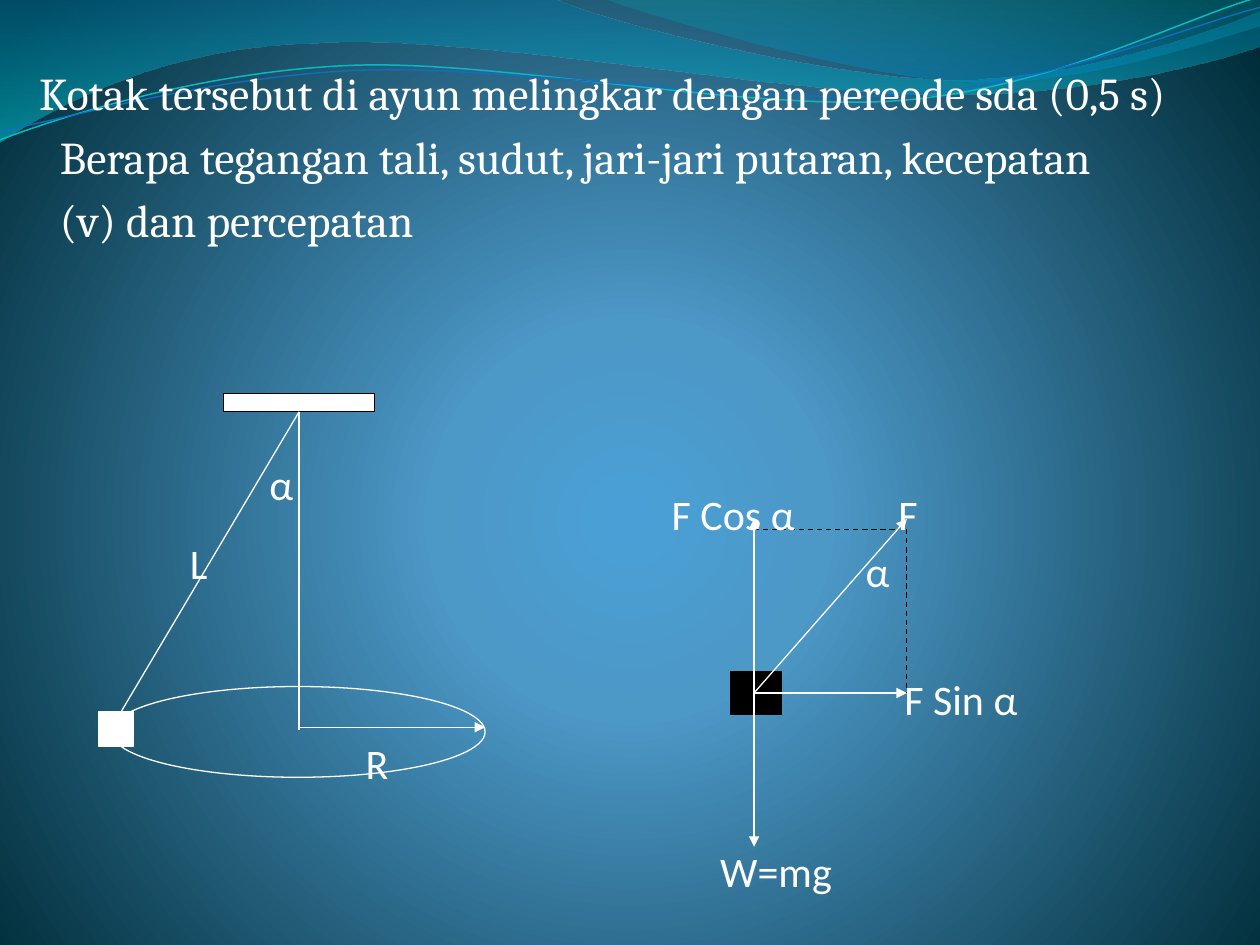
"""Build a physics slide about a box swung in a horizontal circle."""
import pptx
import pptx.dml.color
import pptx.enum.dml
import pptx.enum.shapes
import pptx.oxml
import pptx.oxml.ns
import pptx.util

Cm, Pt = pptx.util.Cm, pptx.util.Pt
RGBColor = pptx.dml.color.RGBColor
SHAPES = pptx.enum.shapes.MSO_SHAPE
DASH = pptx.enum.dml.MSO_LINE.DASH
NAMESPACE = pptx.oxml.ns.nsdecls("a")

WHITE, BLACK = RGBColor(255, 255, 255), RGBColor(0, 0, 0)
TEAL, BLUE = RGBColor(0x0A, 0xB8, 0xBF), RGBColor(0x0F, 0x6F, 0xC6)
SKY, STEEL, NIGHT = RGBColor(0x4A, 0xA0, 0xD6), RGBColor(0x4C, 0x98, 0xC7), RGBColor(0, 0x2C, 0x38)
OCEAN, CYAN = RGBColor(0, 0x74, 0xA1), RGBColor(0, 0xC6, 0xCF)
LAGOON, AZURE = RGBColor(0, 0xA1, 0xA9), RGBColor(0, 0x8B, 0xBF)

DOWNWARD = '<a:lin ang="5400000" scaled="1"/>'
RADIAL = '<a:path path="circle"><a:fillToRect l="10000" t="110000" r="10000" b="100000"/></a:path>'
BACKGROUND = [(0, SKY, 100), (25, STEEL, 100), (100, NIGHT, 100)]

BANDS = [
    ([(0, OCEAN, 45), (100, CYAN, 55)],
     [(0, 0), (11.18, -0.03), (12.09, 0.43, 16.87, 1.6, 19.25, 1.6),
      (21.67, 1.6, 24.33, 0.66, 25.4, 0.23), (25.43, 0.91),
      (24.97, 1.12, 22.1, 1.93, 18.95, 1.91), (15.8, 1.91, 9.7, 0.71, 6.53, 0.86),
      (3.28, 0.91, 1.17, 2.11, -0.03, 2.87)]),
    ([(0, LAGOON, 30), (80, AZURE, 45)],
     [(12.17, -0.03), (12.93, 0.28, 17.32, 1.57, 19.53, 1.65),
      (21.74, 1.75, 24.41, 0.81, 25.4, 0.53), (25.4, 0)]),
]
WAVES = [
    (TEAL, 0.85,
     [(0, 2.82), (1.22, 2.36, 4.01, 1.45, 7.04, 1.32), (10.03, 1.19, 15.06, 2.26, 18.11, 2.03),
      (21.16, 1.8, 23.83, 0.38, 25.35, -0.05)]),
    (BLUE, 0.75,
     [(0, 2.64), (1.19, 2.44, 4.17, 1.55, 7.19, 1.42), (10.24, 1.3, 15.16, 2.13, 18.21, 1.91),
      (21.23, 1.7, 23.9, 0.53, 25.4, 0.15)]),
]

QUESTION = [
    ("Kotak tersebut di ayun melingkar dengan pereode sda (0,5 s)", 0),
    ("Berapa tegangan tali, sudut, jari-jari putaran, kecepatan", 0.42),
    ("(v) dan percepatan", 0.42),
]
AXIS_X, AXIS_Y = 6.03, 8.3
BOX_X, BOX_Y, FORCE_X, FORCE_Y, DASH_Y = 15.2, 13.97, 18.28, 10.46, 10.67
PENDULUM = {
    "bodies": {
        "orbit": (SHAPES.OVAL, (2.24, 13.84, 7.54, 1.83), None, WHITE),
        "swung box": (SHAPES.RECTANGLE, (1.98, 14.35, 0.71, 0.69), WHITE, WHITE),
        "ceiling": (SHAPES.RECTANGLE, (4.51, 7.93, 3.04, 0.37), WHITE, BLACK),
    },
    "lines": [
        ((AXIS_X, AXIS_Y), (AXIS_X, 14.71), WHITE, "", "ceiling"),
        ((AXIS_X, AXIS_Y), (2.44, 14.35), WHITE, "", "ceiling"),
        ((AXIS_X, 14.66), (9.78, 14.66), WHITE, "tail", None),
    ],
    "labels": [("α", 5.18, 9.12, 1.32), ("L", 3.58, 10.72, 1.32), ("R", 7.12, 14.75, 1.32)],
}
FORCES = {
    "bodies": {"force box": (SHAPES.RECTANGLE, (14.73, 13.54, 1.03, 0.86), BLACK, BLACK)},
    "lines": [
        ((BOX_X, FORCE_Y), (BOX_X, 17.07), WHITE, "head tail", None),
        ((BOX_X, BOX_Y), (FORCE_X, FORCE_Y), WHITE, "tail", None),
        ((BOX_X, BOX_Y), (FORCE_X, BOX_Y), WHITE, "tail", None),
        ((FORCE_X, DASH_Y), (FORCE_X, BOX_Y), BLACK, "", None),
        ((BOX_X, DASH_Y), (18.11, DASH_Y), BLACK, "", None),
    ],
    "labels": [
        ("W=mg", 14.27, 16.92, 4.98), ("F Sin α", 17.98, 13.46, 3.66),
        ("F Cos α", 13.29, 9.73, 3.89), ("F", 17.86, 9.73, 2.13), ("α", 17.2, 10.87, 2.13),
    ],
}
QUESTION_FONT = {"name": "Cambria", "size": Pt(26)}
LABEL_FONT = {"name": "Calibri", "size": Pt(24)}
QUESTION_FRAME = {"word_wrap": True, "margin_left": 0, "margin_right": Cm(0.05)}
LABEL_FRAME = {"word_wrap": True}


def set_all(target, values):
    for name, value in values.items():
        setattr(target, name, value)


def set_gradient(fill, element, stops, direction):
    fill.gradient()
    gradient = next(element.iter(pptx.oxml.ns.qn("a:gradFill")))
    for child in list(gradient):
        gradient.remove(child)
    stop_xml = "".join(
        f'<a:gs pos="{position * 1000}"><a:srgbClr val="{color}">'
        f'<a:alpha val="{opacity * 1000}"/></a:srgbClr></a:gs>'
        for position, color, opacity in stops)
    for xml in (f"<a:gsLst {NAMESPACE}>{stop_xml}</a:gsLst>",
                direction.replace(" ", f" {NAMESPACE} ", 1)):
        gradient.append(pptx.oxml.parse_xml(xml))


def add_outline(shapes, segments, close):
    points = [(Cm(segment[i]), Cm(segment[i + 1]))
              for segment in segments for i in range(0, len(segment), 2)]
    builder = shapes.build_freeform(*points[0])
    builder.add_line_segments(points[1:], close=close)
    shape = builder.convert_to_shape()
    shape.shadow.inherit = False
    steps = iter(list(shape._element.iter(pptx.oxml.ns.qn("a:lnTo"))))
    for segment in segments[1:]:
        group = [next(steps) for _ in range(len(segment) // 2)]
        if len(group) == 3:
            curve = pptx.oxml.parse_xml(f"<a:cubicBezTo {NAMESPACE}/>")
            group[0].addprevious(curve)
            for step in group:
                curve.append(step[0])
                step.getparent().remove(step)
    return shape


def set_line(line, color, width=0.75):
    line.color.rgb = color
    line.width = Pt(width)


def add_body(shapes, kind, box, fill, outline):
    shape = shapes.add_shape(kind, *map(Cm, box))
    shape.shadow.inherit = False
    if fill is None:
        shape.fill.background()
    else:
        shape.fill.solid()
        shape.fill.fore_color.rgb = fill
    set_line(shape.line, outline)
    return shape


def add_line(shapes, start, end, color, arrows, anchor):
    connector = shapes.add_connector(
        pptx.enum.shapes.MSO_CONNECTOR.STRAIGHT, *map(Cm, start + end))
    set_line(connector.line, color)
    if color == BLACK:
        connector.line.dash_style = DASH
    if anchor is not None:
        connector.begin_connect(anchor, 2)
    for end_name in arrows.split():
        connector.line._get_or_add_ln().append(
            pptx.oxml.parse_xml(f'<a:{end_name}End {NAMESPACE} type="triangle"/>'))
    connector._element.spPr.append(pptx.oxml.parse_xml(f"<a:effectLst {NAMESPACE}/>"))


def add_text(shapes, box, lines, frame_format, font_format, space_before):
    frame = shapes.add_textbox(*map(Cm, box)).text_frame
    set_all(frame, frame_format)
    for index, (text, indent) in enumerate(lines):
        paragraph = frame.add_paragraph() if index else frame.paragraphs[0]
        paragraph.space_before = Pt(space_before)
        if indent:
            paragraph._p.get_or_add_pPr().set("marL", str(Cm(indent)))
        run = paragraph.add_run()
        run.text = text
        set_all(run.font, font_format)
        run.font.color.rgb = WHITE


def add_figure(slide, figure):
    shapes = slide.shapes.add_group_shape().shapes
    bodies = {name: add_body(shapes, *body) for name, body in figure["bodies"].items()}
    for *line, anchor in figure["lines"]:
        add_line(shapes, *line, bodies.get(anchor))
    for text, left, top, width in figure["labels"]:
        add_text(shapes, (left, top, width, 1.14), [(text, 0)], LABEL_FRAME, LABEL_FONT, 0)


def main():
    presentation = pptx.Presentation()
    set_all(presentation, {"slide_width": Cm(25.4), "slide_height": Cm(19.05)})
    slide = presentation.slides.add_slide(presentation.slide_layouts[6])
    set_gradient(slide.background.fill, slide._element, BACKGROUND, RADIAL)
    for stops, segments in BANDS:
        band = add_outline(slide.shapes, segments, True)
        set_gradient(band.fill, band._element, stops, DOWNWARD)
        band.line.fill.background()
    wave_shapes = slide.shapes.add_group_shape().shapes
    for color, width, segments in WAVES:
        wave = add_outline(wave_shapes, segments, False)
        wave.fill.background()
        set_line(wave.line, color, width)
    add_text(slide.shapes, (0.79, 1.19, 24.61, 9.12), QUESTION, QUESTION_FRAME, QUESTION_FONT, 5.2)
    for figure in (PENDULUM, FORCES):
        add_figure(slide, figure)
    presentation.save("out.pptx")


if __name__ == "__main__":
    main()
